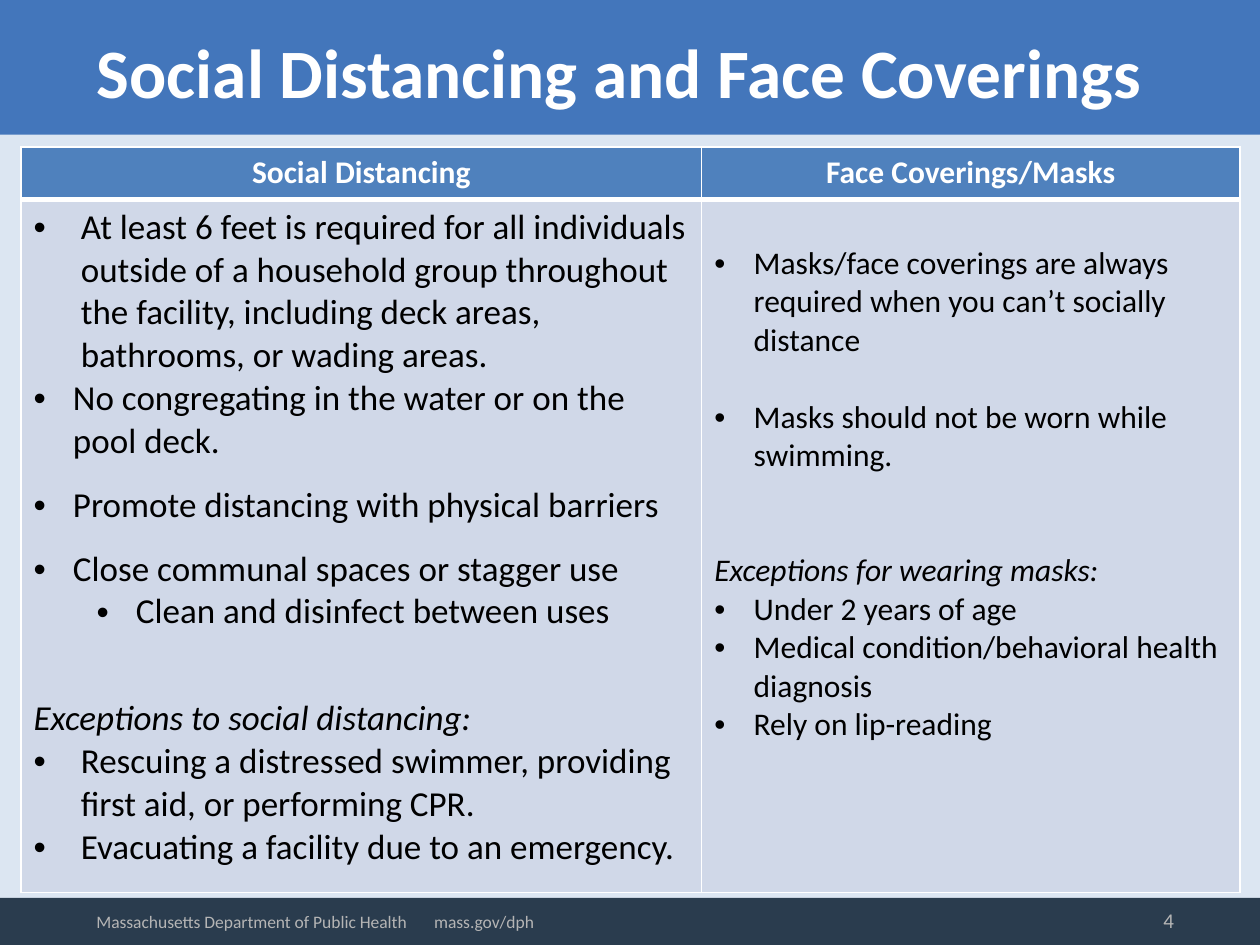
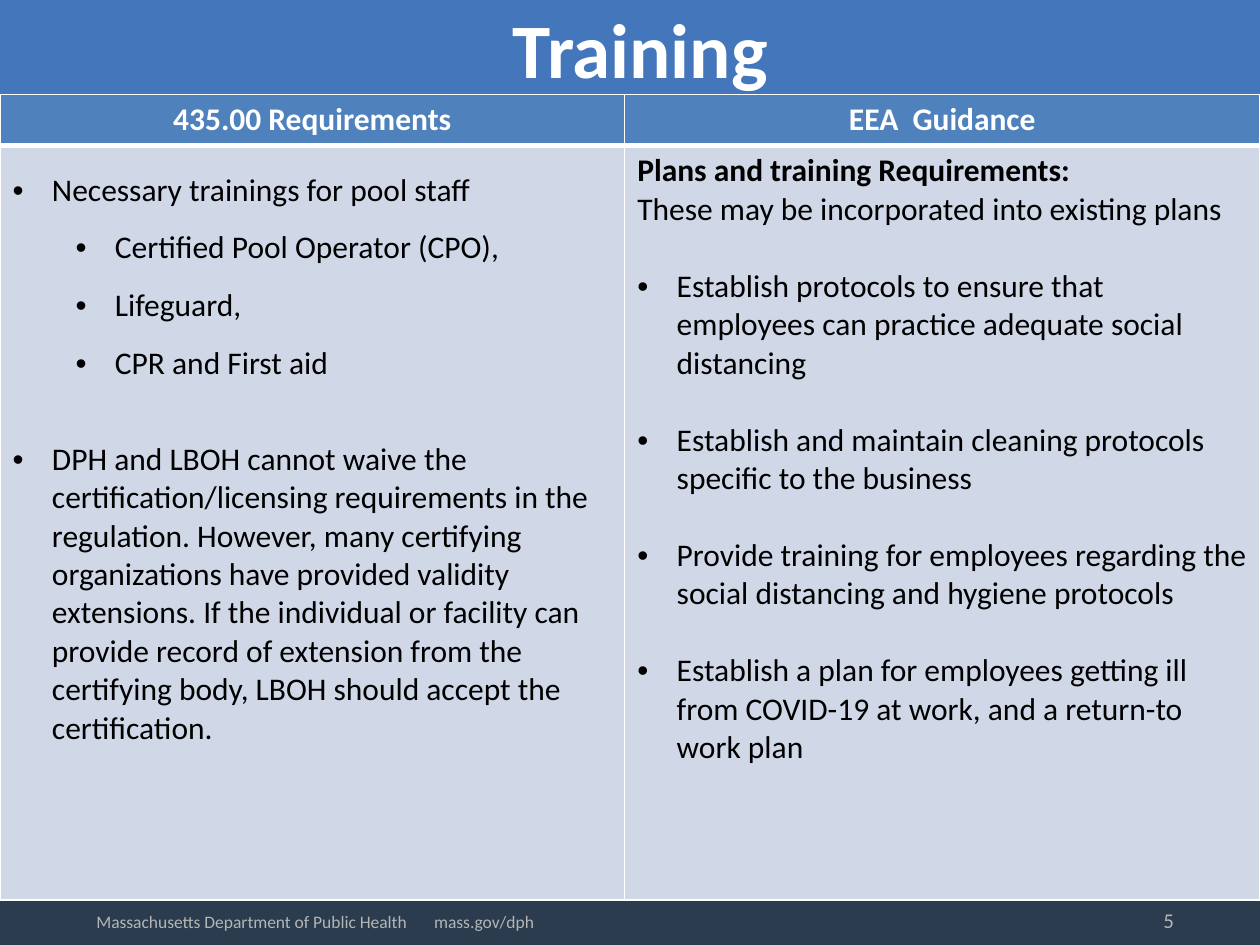
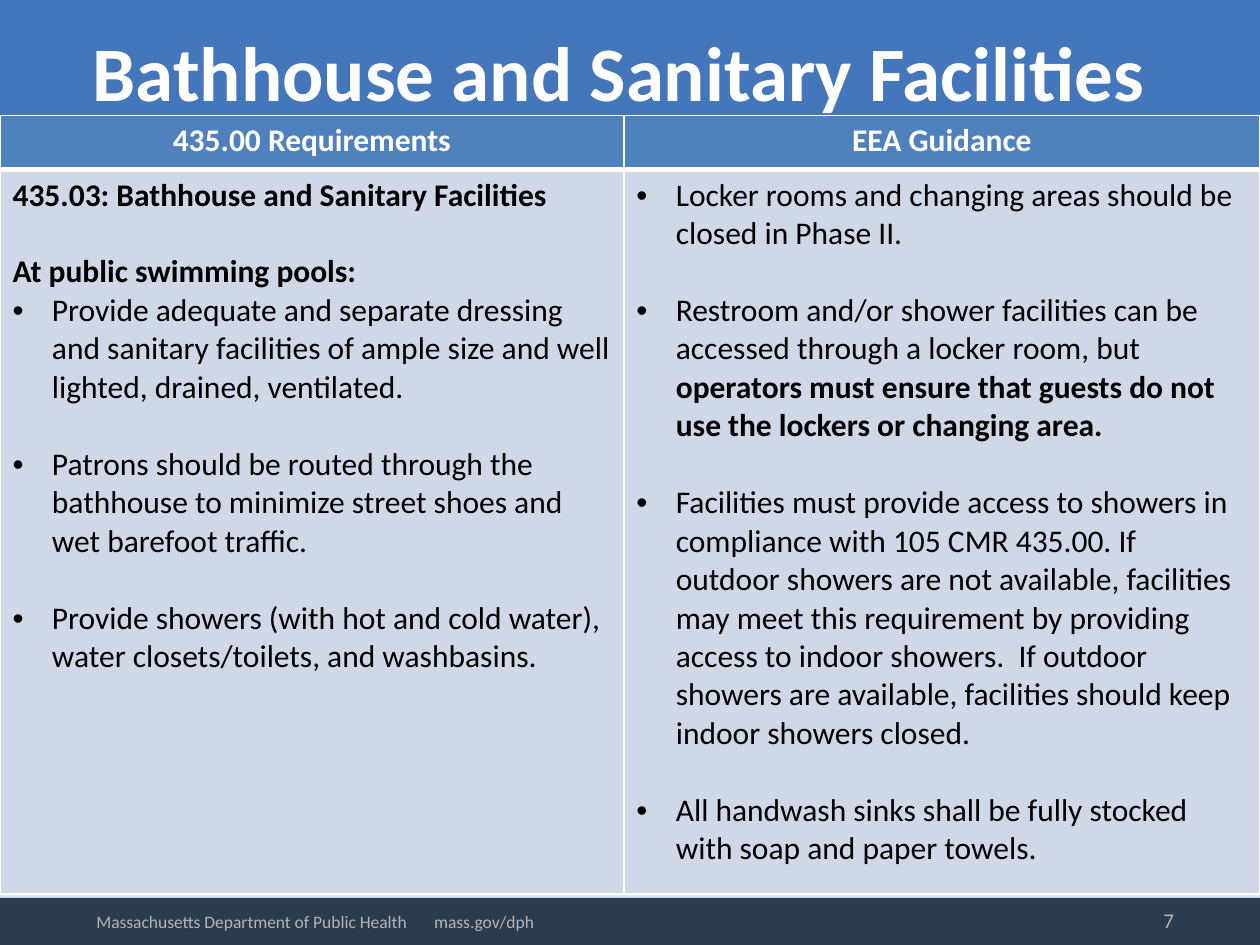
import pptx
import pptx.dml.color
import pptx.enum.shapes
import pptx.enum.text
import pptx.oxml
import pptx.oxml.ns
import pptx.util
from lxml import etree

Pt = pptx.util.Pt
RGB = pptx.dml.color.RGBColor
ALIGN = pptx.enum.text.PP_ALIGN
MIDDLE = pptx.enum.text.MSO_ANCHOR.MIDDLE
qn = pptx.oxml.ns.qn

# Style
PALE = RGB(0xDC, 0xE6, 0xF2)
BLUE = RGB(0x43, 0x76, 0xBB)
NAVY = RGB(0x2A, 0x3C, 0x4E)
HEAD = RGB(0x4F, 0x81, 0xBD)
CELL = RGB(0xD0, 0xD8, 0xE8)
GREY = RGB(0xB5, 0xB5, 0xB5)
WHITE = RGB(0xFF, 0xFF, 0xFF)
BLACK = RGB(0, 0, 0)
FONT = "Calibri"
WIDE, HIGH = 720, 540
LINE = 22  # one line of 18 pt text

# Kinds of paragraph: left margin, hanging indent, level, line spacing, font
KINDS = {
    "plain": {},
    "bold": {"font": {"bold": True}},
    "italic": {"font": {"italic": True}},
    "item": {"hang": 22.5},
    "wide": {"hang": 27},
    "sub": {"left": 58.5, "hang": 22.5, "level": 1},
    "loose": {"hang": 22.5, "space": 1.5},
    "subloose": {"left": 58.5, "hang": 22.5, "level": 1, "space": 1.5},
}


def assign(thing, **values):
    for name, value in values.items():
        setattr(thing, name, value)


class Deck:
    def __init__(self):
        self.prs = pptx.Presentation()
        assign(self.prs, slide_width=Pt(WIDE), slide_height=Pt(HIGH))
        self.slide = None
        self.master = self.prs.slide_master
        fill = self.master.background.fill
        fill.solid()
        fill.fore_color.rgb = PALE

    def page(self, title, number, size=44, box=(30, 0, 648, 81)):
        """Start a slide with its title and footer."""
        first = self.slide is None
        self.slide = self.prs.slides.add_slide(self.prs.slide_layouts[5])
        if first:
            self.band(0, 77, BLUE, 2)
            self.band(513, 27, NAVY, 3)
        shape = self.slide.shapes.title
        self.place(shape, box)
        self.words(shape.text_frame.paragraphs[0], title, ALIGN.CENTER,
                   size=Pt(size), bold=True, color=WHITE)
        self.label(number, (517, 511, 161, 29), 12, ALIGN.RIGHT)
        foot = self.label("Massachusetts Department of Public Health\tmass.gov/dph",
                          (48, 513, 300, 27), 10, ALIGN.LEFT)
        tabs = etree.SubElement(foot._p.get_or_add_pPr(), qn("a:tabLst"))
        etree.SubElement(tabs, qn("a:tab"), pos=str(Pt(193)), algn="l")

    def band(self, top, high, color, order):
        """Draw a full-width band and hand it to the master."""
        shape = self.slide.shapes.add_shape(
            pptx.enum.shapes.MSO_SHAPE.RECTANGLE, 0, Pt(top), Pt(WIDE), Pt(high))
        shape.shadow.inherit = False
        shape.fill.solid()
        shape.fill.fore_color.rgb = color
        shape.line.fill.background()
        self.master.shapes.element.insert(order, shape.element)

    def place(self, shape, box):
        names = ("left", "top", "width", "height")
        assign(shape, **dict(zip(names, map(Pt, box))))
        assign(shape.text_frame, word_wrap=True, vertical_anchor=MIDDLE,
               auto_size=pptx.enum.text.MSO_AUTO_SIZE.NONE)

    def words(self, para, text, align=ALIGN.LEFT, color=BLACK, **font):
        """Fill a paragraph; text between bars is bold."""
        para.alignment = align
        for count, part in enumerate(text.split("|")):
            run = para.add_run()
            run.text = part
            assign(run.font, **{"name": FONT, "bold": count % 2 == 1, **font})
            run.font.color.rgb = color

    def label(self, text, box, size, align):
        shape = self.slide.shapes.add_textbox(*map(Pt, box))
        self.place(shape, box)
        para = shape.text_frame.paragraphs[0]
        self.words(para, text, align, GREY, size=Pt(size))
        return para

    def entry(self, para, kind, text, gap, size):
        form = KINDS[kind]
        hang = form.get("hang", 0)
        assign(para, level=form.get("level", 0), space_before=Pt(gap),
               line_spacing=form.get("space", 1.0))
        props = para._p.get_or_add_pPr()
        props.set("marL", str(Pt(form.get("left", hang))))
        props.set("indent", str(-Pt(hang)))
        if hang:
            etree.SubElement(props, qn("a:buFont"), typeface="Arial")
            etree.SubElement(props, qn("a:buChar"), char="•")
        self.words(para, text, size=Pt(size), **form.get("font", {}))

    def paint(self, cell, color, **widths):
        """Give a cell white borders, then its fill."""
        props = cell._tc.get_or_add_tcPr()
        for side in "LRTB":
            line = etree.SubElement(props, qn("a:ln" + side),
                                    w=str(Pt(widths.get(side, 1))))
            solid = etree.SubElement(line, qn("a:solidFill"))
            etree.SubElement(solid, qn("a:srgbClr"), val=str(WHITE))
        cell.fill.solid()
        cell.fill.fore_color.rgb = color

    def table(self, left, top, cols, rows, heads, bodies, sizes=(18, 18), drops=(0, 0)):
        """Two columns, each a heading over a list of (kind, text, gap)."""
        grid = self.slide.shapes.add_table(
            2, 2, Pt(left), Pt(top), Pt(sum(cols)), Pt(sum(rows))).table
        for row, high in zip(grid.rows, rows):
            row.height = Pt(high)
        for col, wide in enumerate(cols):
            grid.columns[col].width = Pt(wide)
            head, body = grid.cell(0, col), grid.cell(1, col)
            self.paint(head, HEAD, B=3)
            self.paint(body, CELL, T=3)
            self.words(head.text_frame.paragraphs[0], heads[col], ALIGN.CENTER,
                       WHITE, size=Pt(18), bold=True)
            body.margin_top = Pt(3.6 + drops[col])
            frame = body.text_frame
            for count, (kind, text, gap) in enumerate(bodies[col]):
                para = frame.add_paragraph() if count else frame.paragraphs[0]
                self.entry(para, kind, text, gap, sizes[col])


def main():
    deck = Deck()

    # Distancing and masks
    deck.page("Social Distancing and Face Coverings", "4", size=39.6)
    space = [
        ("wide", "At least 6 feet is required for all individuals outside of a household "
                 "group throughout the facility, including deck areas, bathrooms, or "
                 "wading areas.", 0),
        ("item", "No congregating in the water or on the pool deck.", 0),
        ("item", "Promote distancing with physical barriers", 12),
        ("item", "Close communal spaces or stagger use", 12),
        ("sub", "Clean and disinfect between uses", 0),
        ("italic", "Exceptions to social distancing:", 36.4),
        ("wide", "Rescuing a distressed swimmer, providing first aid, or performing CPR.", 0),
        ("wide", "Evacuating a facility due to an emergency.", 0),
    ]
    masks = [
        ("item", "Masks/face coverings are always required when you can’t socially "
                 "distance", 0),
        ("item", "Masks should not be worn while swimming.", LINE),
        ("italic", "Exceptions for wearing masks:", 2 * LINE),
        ("item", "Under 2 years of age", 0),
        ("item", "Medical condition/behavioral health diagnosis", 0),
        ("item", "Rely on lip-reading", 0),
    ]
    deck.table(12, 84, (389, 307.5), (30, 396),
               ("Social Distancing", "Face Coverings/Masks"),
               (space, masks), sizes=(20, 18), drops=(0, LINE))

    # Training
    deck.page("Training", "5", box=(42, -18, 648, 90))
    staff = [
        ("loose", "Necessary trainings for pool staff", 0),
        ("subloose", "Certified Pool Operator (CPO),", 0),
        ("subloose", "Lifeguard,", 0),
        ("subloose", "CPR and First aid", 0),
        ("item", "DPH and LBOH cannot waive the certification/licensing requirements in "
                 "the regulation. However, many certifying organizations have provided "
                 "validity extensions. If the individual or facility can provide record "
                 "of extension from the certifying body, LBOH should accept the "
                 "certification.", 1.5 * LINE),
    ]
    plans = [
        ("bold", "Plans and training Requirements:", 0),
        ("plain", "These may be incorporated into existing plans", 0),
        ("item", "Establish protocols to ensure that employees can practice adequate "
                 "social distancing", LINE),
        ("item", "Establish and maintain cleaning protocols specific to the business", LINE),
        ("item", "Provide training for employees regarding the social distancing and "
                 "hygiene protocols", LINE),
        ("item", "Establish a plan for employees getting ill from COVID-19 at work, and "
                 "a return-to work plan", LINE),
    ]
    deck.table(0, 54, (357, 363), (28, 431),
               ("435.00 Requirements", "EEA  Guidance"), (staff, plans))

    # Bathhouse
    deck.page("Bathhouse and Sanitary Facilities", "7")
    rules = [
        ("bold", "435.03: Bathhouse and Sanitary Facilities", 0),
        ("bold", "At public swimming pools:", LINE),
        ("item", "Provide adequate and separate dressing and sanitary facilities of ample "
                 "size and well lighted, drained, ventilated.", 0),
        ("item", "Patrons should be routed through the bathhouse to minimize street shoes "
                 "and wet barefoot traffic.", LINE),
        ("item", "Provide showers (with hot and cold water), water closets/toilets, and "
                 "washbasins.", LINE),
    ]
    guide = [
        ("item", "Locker rooms and changing areas should be closed in Phase II.", 0),
        ("item", "Restroom and/or shower facilities can be accessed through a locker room, "
                 "but |operators must ensure that guests do not use the lockers or "
                 "changing area.", LINE),
        ("item", "Facilities must provide access to showers in compliance with 105 CMR "
                 "435.00. If outdoor showers are not available, facilities may meet this "
                 "requirement by providing access to indoor showers.  If outdoor showers "
                 "are available, facilities should keep indoor showers closed.", LINE),
        ("item", "All handwash sinks shall be fully stocked with soap and paper towels.",
         LINE),
    ]
    deck.table(0, 66, (356.5, 363.5), (31, 414),
               ("435.00 Requirements", "EEA Guidance"), (rules, guide))

    deck.prs.save("out.pptx")


if __name__ == "__main__":
    main()
